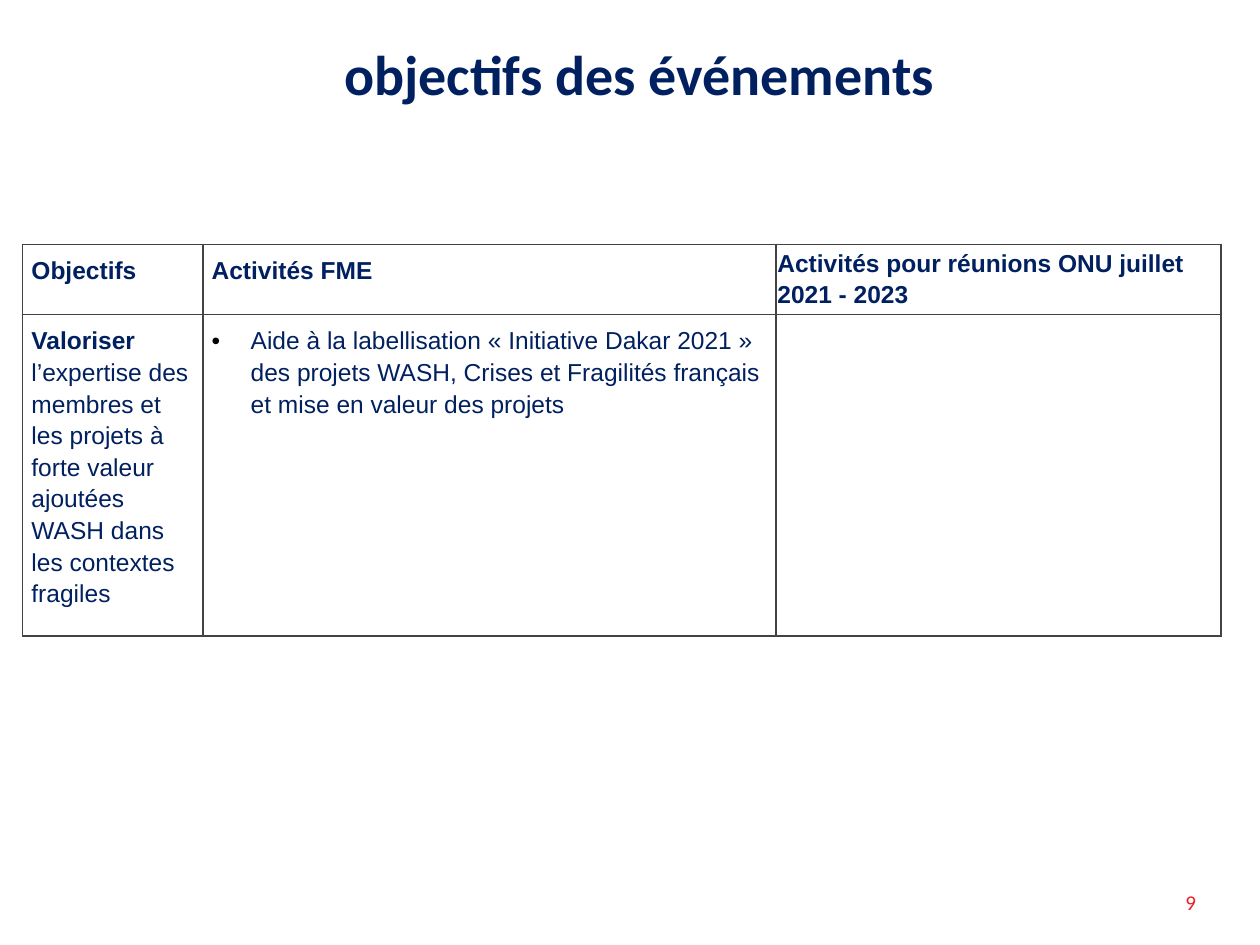
from dataclasses import dataclass

from lxml import etree
from pptx import Presentation
from pptx.dml.color import RGBColor
from pptx.enum.text import MSO_ANCHOR, PP_ALIGN
from pptx.oxml.ns import qn
from pptx.util import Inches, Pt

CENTER, MIDDLE = PP_ALIGN.CENTER, MSO_ANCHOR.MIDDLE
WIDE, HIGH = 10, 7.5


@dataclass(frozen=True)
class Theme:
    navy: str = "002060"
    red: str = "ED1C24"
    rule: str = "434343"
    dot: str = "000000"
    head: str = "Calibri"
    body: str = "Arial"
    big: int = 32
    mid: int = 14
    low: int = 12


def add(parent, tag, **attrs):
    return etree.SubElement(parent, qn(tag), attrs)


def paint(parent, color):
    add(add(parent, "a:solidFill"), "a:srgbClr", val=color)


def inset(target, side):
    for name in ("left", "right", "top", "bottom"):
        setattr(target, f"margin_{name}", Inches(side))


class Deck:
    def __init__(self, theme):
        self.theme = theme
        self.show = Presentation()
        self.show.slide_width = Inches(WIDE)
        self.show.slide_height = Inches(HIGH)
        self.slide = self.show.slides.add_slide(self.show.slide_layouts[6])

    def frame(self, x, y, w, h):
        """Turn shares of the slide into lengths."""
        return [Inches(n) for n in (x * WIDE, y * HIGH, w * WIDE, h * HIGH)]

    def words(self, para, text, **style):
        run = para.add_run()
        run.text = text
        color = style.pop("color", self.theme.navy)
        for key, value in style.items():
            setattr(run.font, key, value)
        run.font.color.rgb = RGBColor.from_string(color)

    def label(self, area, text, indent=0, space=1.0, **style):
        box = self.slide.shapes.add_textbox(*self.frame(*area)).text_frame
        box.word_wrap = True
        box.vertical_anchor = MIDDLE
        para = box.paragraphs[0]
        para.alignment = CENTER
        para.line_spacing = space
        para._p.get_or_add_pPr().set("marL", str(Inches(indent)))
        self.words(para, text, **style)

    def bullet(self, para):
        props = para._p.get_or_add_pPr()
        props.set("marL", str(Inches(0.31)))
        props.set("indent", str(Inches(-0.31)))
        add(add(props, "a:buClr"), "a:srgbClr", val=self.theme.dot)
        add(props, "a:buFont", typeface=self.theme.body)
        add(props, "a:buChar", char="•")

    def border(self, cell):
        props = cell._tc.get_or_add_tcPr()
        for spot, side in enumerate("LRTB"):
            line = add(props, f"a:ln{side}", w=str(Pt(1)))
            paint(line, self.theme.rule)
            props.insert(spot, line)

    def cell(self, cell, runs, pad=0.07, dotted=False):
        """Fill one cell with (text, bold) runs."""
        cell.fill.background()
        self.border(cell)
        inset(cell, pad)
        para = cell.text_frame.paragraphs[0]
        if dotted:
            self.bullet(para)
        para.line_spacing = 1.15
        para.font.size = Pt(self.theme.mid)
        for text, bold in runs:
            self.words(para, text, bold=bold, name=self.theme.body,
                       size=Pt(self.theme.mid))

    def table(self, area, cols, rows, cells):
        x, y, w, h = self.frame(*area)
        grid = self.slide.shapes.add_table(len(rows), len(cols), x, y, w, h).table
        grid.first_row = grid.horz_banding = False
        for col, part in zip(grid.columns, cols):
            col.width = round(w * part / sum(cols))
        for row, part in zip(grid.rows, rows):
            row.height = round(h * part / sum(rows))
        for r, line in enumerate(cells):
            for c, item in enumerate(line):
                self.cell(grid.cell(r, c), **item)


def main():
    theme = Theme()
    deck = Deck(theme)
    deck.label((0.92, 0.93, 0.05, 0.05), "9", color=theme.red,
               name=theme.head, size=Pt(theme.low))
    deck.label((0, 0, 1, 1 / 6), "objectifs des événements ", indent=0.25,
               space=0.81, bold=True, name=theme.head, size=Pt(theme.big))
    goal = [
        ("Valoriser ", True),
        ("l’expertise des membres et les projets à forte valeur ajoutées "
         "WASH dans les contextes fragiles", False),
    ]
    action = ("Aide à la labellisation « Initiative Dakar 2021 » des projets WASH, "
              "Crises et Fragilités français et mise en valeur des projets")
    deck.table(
        (0.18 / WIDE, 1.94 / HIGH, 9.51 / WIDE, 2.92 / HIGH),
        (1.43, 4.55, 3.53), (0.52, 2.4),
        [
            [{"runs": [("Objectifs", True)]},
             {"runs": [("Activités FME", True)]},
             {"runs": [("Activités pour réunions ONU juillet 2021 - 2023", True)],
              "pad": 0.01}],
            [{"runs": goal},
             {"runs": [(action, False)], "dotted": True},
             {"runs": []}],
        ],
    )
    deck.show.save("out.pptx")


if __name__ == "__main__":
    main()
